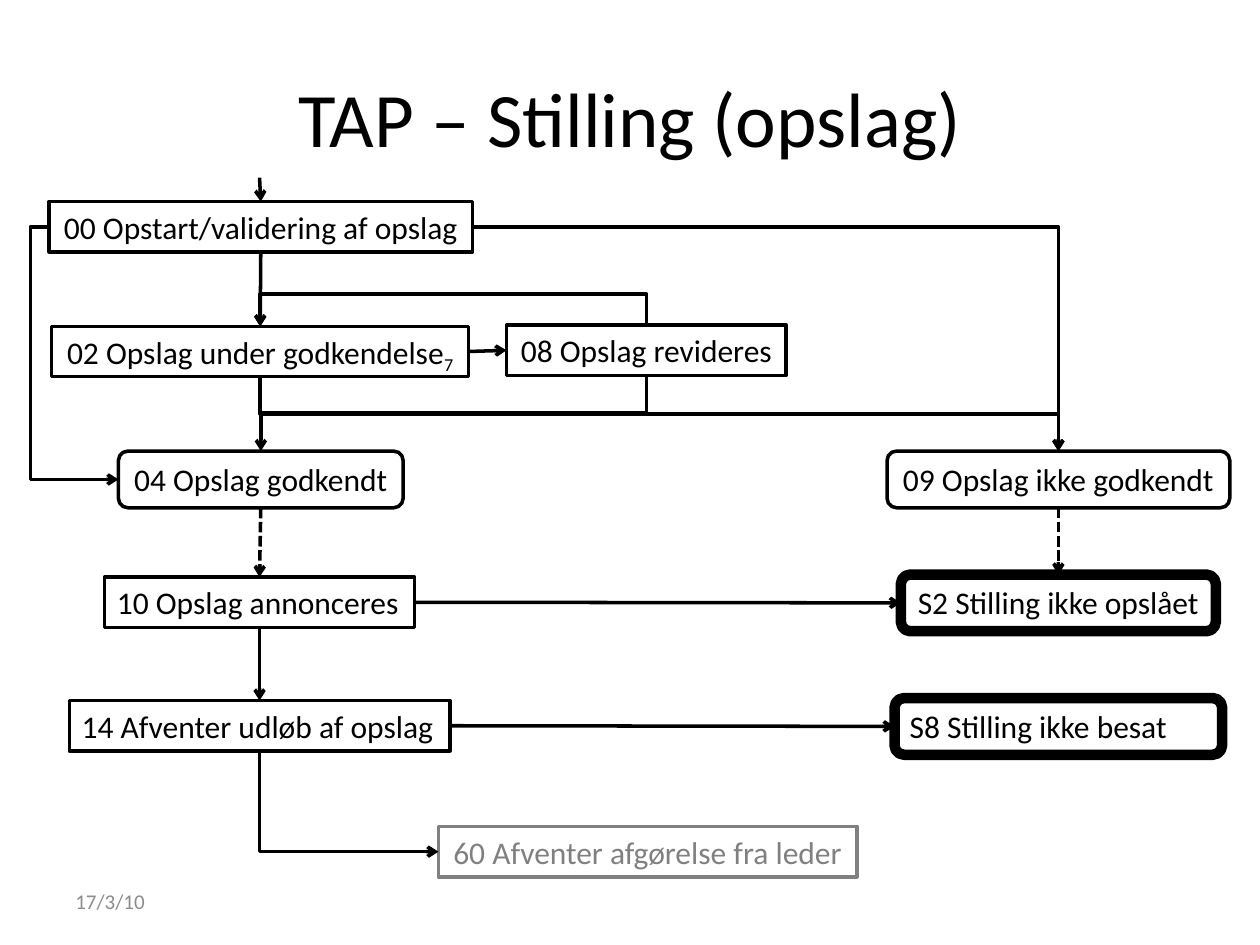
from lxml.etree import SubElement
from pptx import Presentation
from pptx.dml.color import RGBColor
from pptx.enum.dml import MSO_LINE
from pptx.enum.shapes import MSO_CONNECTOR as Link, MSO_SHAPE as Shape
from pptx.enum.text import MSO_ANCHOR as Anchor, MSO_AUTO_SIZE as AutoSize, PP_ALIGN as Align
from pptx.oxml.ns import qn
from pptx.util import Inches, Pt

TOP, LEFT, BOTTOM, RIGHT = range(4)
BLACK, GREY, PALE = "000000", "808080", "8C8C8C"


def write(para, text, size, color, align=Align.LEFT):
    """Add one formatted run to the paragraph and return it."""
    para.alignment = align
    span = para.add_run()
    span.text = text
    for name, value in {"name": "Calibri", "size": Pt(size)}.items():
        setattr(span.font, name, value)
    span.font.color.rgb = RGBColor.from_string(color)
    return span


def finish_arrow(arrow, dashed=False):
    """Give the connector its black line, arrowhead and no shadow."""
    arrow.line.color.rgb = RGBColor.from_string(BLACK)
    arrow.line.width = Pt(2)
    if dashed:
        arrow.line.dash_style = MSO_LINE.SQUARE_DOT
    SubElement(arrow.line._get_or_add_ln(), qn("a:tailEnd"), type="arrow")
    SubElement(arrow._element.spPr, qn("a:effectLst"))


deck = Presentation()
deck.slide_width, deck.slide_height = Inches(10), Inches(7.5)
page = deck.slides.add_slide(deck.slide_layouts[5])

title = page.shapes.title
title.left, title.top, title.width, title.height = map(Inches, (0.5, 0.3, 9, 1.25))
title.text_frame.vertical_anchor = Anchor.MIDDLE
write(title.text_frame.paragraphs[0], "TAP – Stilling (opslag)", 44, BLACK, Align.CENTER)

date = page.shapes.add_textbox(*map(Inches, (0.5, 6.95, 2.33, 0.4)))
date.text_frame.word_wrap = True
date.text_frame.vertical_anchor = Anchor.MIDDLE
write(date.text_frame.paragraphs[0], "17/3/10", 12, PALE)

# Steps: text, left, top, width, rounded, line width, colour, alignment
steps = {
    "00": ("Opstart/validering af opslag", 0.39, 1.6, 3.36, False, 2, BLACK, Align.CENTER),
    "02": ("Opslag under godkendelse", 0.41, 2.59, 3.31, False, 2, BLACK, Align.CENTER),
    "08": ("Opslag revideres", 4.02, 2.58, 2.22, False, 2, BLACK, Align.CENTER),
    "04": ("Opslag godkendt", 0.94, 3.58, 2.26, True, 2, BLACK, Align.CENTER),
    "09": ("Opslag ikke godkendt", 7.04, 3.58, 2.72, True, 2, BLACK, Align.CENTER),
    "10": ("Opslag annonceres", 0.83, 4.58, 2.46, False, 2, BLACK, Align.LEFT),
    "S2": ("Stilling ikke opslået", 7.15, 4.56, 2.5, True, 6, BLACK, Align.CENTER),
    "14": ("Afventer udløb af opslag", 0.55, 5.56, 3.02, False, 2, BLACK, Align.LEFT),
    "S8": ("Stilling ikke besat", 7.1, 5.54, 2.6, True, 6, BLACK, Align.LEFT),
    "60": ("Afventer afgørelse fra leder", 3.48, 6.56, 3.32, False, 2, GREY, Align.CENTER),
}
boxes = {}
for code, (text, left, top, width, rounded, weight, color, align) in steps.items():
    preset = Shape.FLOWCHART_ALTERNATE_PROCESS if rounded else Shape.FLOWCHART_PROCESS
    height = 0.45 if rounded else 0.4
    box = page.shapes.add_shape(preset, *map(Inches, (left, top, width, height)))
    box.shadow.inherit = False
    box.fill.background()
    box.line.color.rgb = RGBColor.from_string(color)
    box.line.width = Pt(weight)
    frame = box.text_frame
    frame.word_wrap = weight == 6
    frame.auto_size = AutoSize.SHAPE_TO_FIT_TEXT
    frame.vertical_anchor = Anchor.TOP
    write(frame.paragraphs[0], f"{code} {text}", 18, color, align)
    boxes[code] = box

index = write(boxes["02"].text_frame.paragraphs[0], "7", 18, BLACK, Align.CENTER)
index._r.get_or_add_rPr().set("baseline", "-25000")

entry = page.shapes.add_connector(Link.STRAIGHT, *map(Inches, (2.06, 1.41, 2.07, 1.6)))
entry.end_connect(boxes["00"], TOP)
finish_arrow(entry)

# Straight arrows: from, side, to, side, dashed
for source, start, target, end, dashed in [
    ("00", BOTTOM, "02", TOP, False),
    ("02", RIGHT, "08", LEFT, False),
    ("04", BOTTOM, "10", TOP, True),
    ("10", BOTTOM, "14", TOP, False),
    ("10", RIGHT, "S2", LEFT, False),
    ("14", RIGHT, "S8", LEFT, False),
    ("09", BOTTOM, "S2", TOP, True),
]:
    arrow = page.shapes.add_connector(Link.STRAIGHT, 0, 0, 0, 0)
    arrow.begin_connect(boxes[source], start)
    arrow.end_connect(boxes[target], end)
    finish_arrow(arrow, dashed)

# Bent arrows: from, side, to, side, position of the middle leg (None: one corner)
for source, start, target, end, middle in [
    ("08", TOP, "02", TOP, -25),
    ("14", BOTTOM, "60", LEFT, None),
    ("00", RIGHT, "09", TOP, None),
    ("08", BOTTOM, "04", TOP, 0.5),
    ("00", LEFT, "04", LEFT, -0.27),
    ("02", BOTTOM, "09", TOP, 0.5),
]:
    arrow = page.shapes.add_connector(Link.ELBOW, 0, 0, 0, 0)
    arrow.begin_connect(boxes[source], start)
    arrow.end_connect(boxes[target], end)
    x1, y1, x2, y2 = arrow.begin_x, arrow.begin_y, arrow.end_x, arrow.end_y
    width, height = abs(x2 - x1), abs(y2 - y1)
    xfrm = arrow._element.spPr.xfrm
    if start in (TOP, BOTTOM):  # a first leg that is vertical needs a quarter turn
        width, height = height, width
        xfrm.rot, xfrm.flipH, xfrm.flipV = 90, y1 > y2, x1 < x2
    else:
        xfrm.flipH, xfrm.flipV = x1 > x2, y1 > y2
    arrow.left, arrow.top = (x1 + x2 - width) // 2, (y1 + y2 - height) // 2
    arrow.width, arrow.height = width, height
    geometry = arrow._element.spPr.prstGeom
    if middle is None:
        geometry.set("prst", "bentConnector2")
    else:
        SubElement(geometry.get_or_add_avLst(), qn("a:gd"), name="adj1",
                   fmla=f"val {round(middle * 100000)}")
    finish_arrow(arrow)

deck.save("out.pptx")
